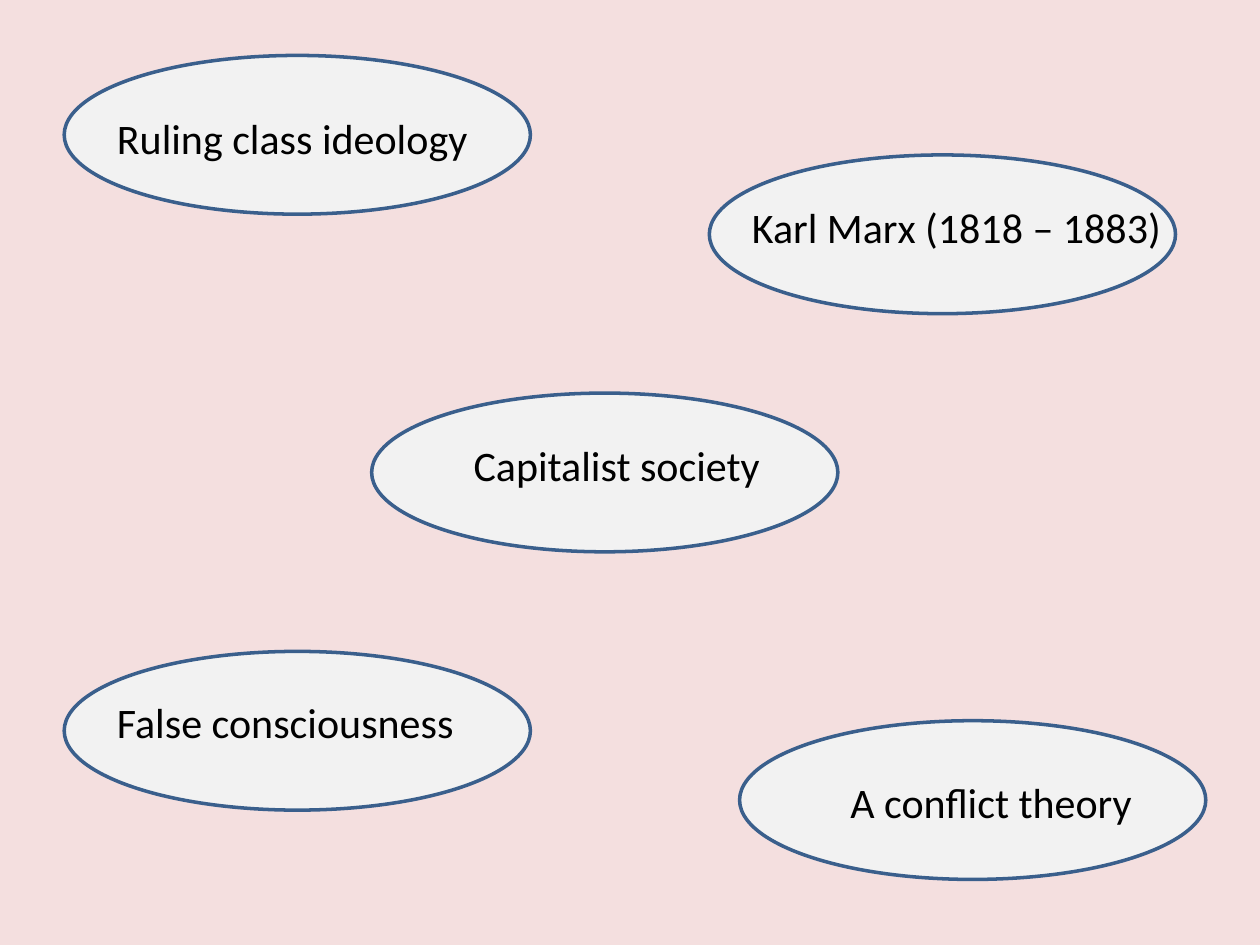
"""Build a slide of five key ideas from Marxist theory, each in an ellipse."""
from pptx import Presentation
from pptx.dml.color import RGBColor
from pptx.enum import shapes, text
from pptx.util import Inches, Pt

BACKGROUND = RGBColor(0xF4, 0xDF, 0xDF)
BUBBLE_FILL = RGBColor(0xF2, 0xF2, 0xF2)
BUBBLE_LINE = RGBColor(0x3A, 0x5F, 0x8C)
BLACK = RGBColor(0x00, 0x00, 0x00)

BUBBLE_WIDTH, BUBBLE_HEIGHT = Inches(3.7), Inches(1.26)
LABEL_HEIGHT = Inches(0.5)

ideas = [
    ("Karl Marx (1818 – 1883)", (5.63, 1.23), (5.87, 1.55), 3.46),
    ("A conflict theory", (5.87, 5.72), (6.65, 6.11), 2.52),
    ("Capitalist society", (2.95, 3.12), (3.66, 3.44), 2.52),
    ("Ruling class ideology", (0.51, 0.44), (0.83, 0.84), 3.07),
    ("False consciousness", (0.51, 5.17), (0.83, 5.48), 2.99),
]

prs = Presentation()
prs.slide_width, prs.slide_height = Inches(10), Inches(7.5)
slide = prs.slides.add_slide(prs.slide_layouts[6])
slide.background.fill.solid()
slide.background.fill.fore_color.rgb = BACKGROUND

for idea, bubble_at, label_at, label_width in ideas:
    bubble = slide.shapes.add_shape(
        shapes.MSO_SHAPE.OVAL, *map(Inches, bubble_at), BUBBLE_WIDTH, BUBBLE_HEIGHT
    )
    bubble.shadow.inherit = False
    bubble.fill.solid()
    bubble.fill.fore_color.rgb = BUBBLE_FILL
    bubble.line.color.rgb = BUBBLE_LINE
    bubble.line.width = Pt(2)

    label = slide.shapes.add_textbox(
        *map(Inches, label_at), Inches(label_width), LABEL_HEIGHT
    ).text_frame
    label.word_wrap = True
    label.auto_size = text.MSO_AUTO_SIZE.SHAPE_TO_FIT_TEXT
    paragraph = label.paragraphs[0]
    paragraph.text = idea
    paragraph.font.name = "Calibri"
    paragraph.font.size = Pt(24)
    paragraph.font.color.rgb = BLACK

prs.save("out.pptx")
